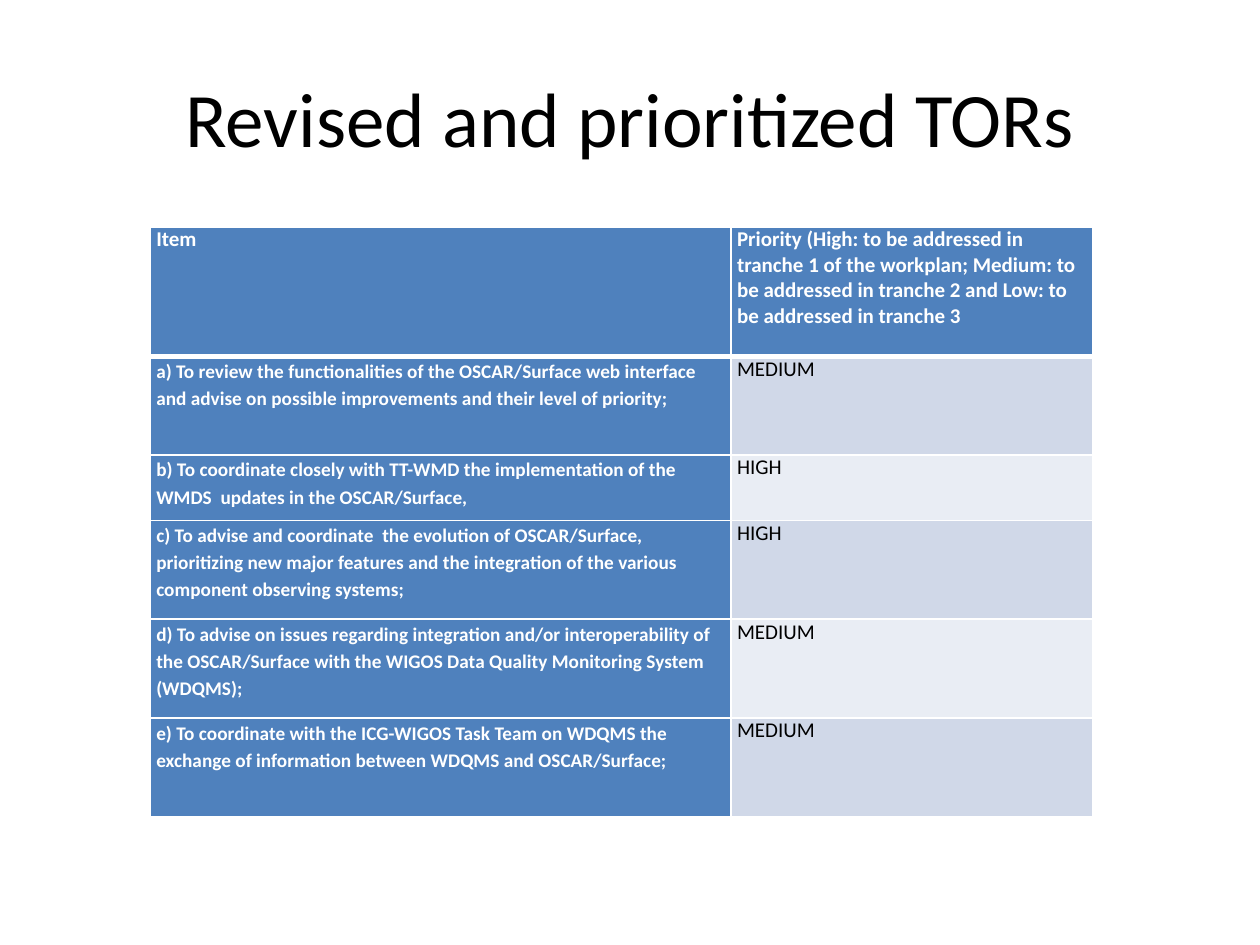
import pptx
import pptx.util
import pptx.dml.color
import pptx.enum.text
import pptx.oxml
import pptx.oxml.ns

TITLE = "Revised and prioritized TORs"
HEAD = (
    "Item",
    "Priority (High: to be addressed in tranche 1 of the workplan; Medium: to "
    "be addressed in tranche 2 and Low: to be addressed in tranche 3",
)
ITEMS = [
    ("a) To review the functionalities of the OSCAR/Surface web interface and "
     "advise on possible improvements and their level of priority;", "MEDIUM"),
    ("b) To coordinate closely with TT-WMD the implementation of the WMDS  "
     "updates in the OSCAR/Surface,", "HIGH"),
    ("c) To advise and coordinate  the evolution of OSCAR/Surface, prioritizing "
     "new major features and the integration of the various component observing "
     "systems;", "HIGH"),
    ("d) To advise on issues regarding integration and/or interoperability of "
     "the OSCAR/Surface with the WIGOS Data Quality Monitoring System (WDQMS);",
     "MEDIUM"),
    ("e) To coordinate with the ICG-WIGOS Task Team on WDQMS the exchange of "
     "information between WDQMS and OSCAR/Surface;", "MEDIUM"),
]
COLS = (4.61, 2.87)
ROWS = (1.03, 0.78, 0.52, 0.785, 0.785, 0.78)
LEFT, TOP = 1.19, 1.8
BLUE, WHITE, BLACK = "4F81BD", "FFFFFF", "000000"
BANDS = ("D0D8E8", "E9EDF4")
inch = pptx.util.Inches


def color(code):
    return pptx.dml.color.RGBColor.from_string(code)


def write(frame, text, size=12, ink=WHITE, bold=False, lines=1.0, align=None):
    para = frame.paragraphs[0]
    para.line_spacing = lines
    para.space_before = pptx.util.Pt(0)
    para.alignment = align
    run = para.add_run()
    run.text = text
    run.font.name = "Calibri"
    run.font.size = pptx.util.Pt(size)
    run.font.bold = bold
    run.font.color.rgb = color(ink)


def border(cell, base):
    """Draw white cell edges; base is the bottom edge's width in points."""
    props = cell._tc.get_or_add_tcPr()
    for spot, (side, width) in enumerate(zip("LRTB", (1, 1, 1, base))):
        props.insert(spot, pptx.oxml.parse_xml(
            f'<a:ln{side} {pptx.oxml.ns.nsdecls("a")} w="{pptx.util.Pt(width)}">'
            f'<a:solidFill><a:srgbClr val="{WHITE}"/></a:solidFill></a:ln{side}>'))


def paint(cell, text, fill, base=1, **style):
    cell.margin_left = cell.margin_right = inch(0.05)
    cell.margin_top = cell.margin_bottom = 0
    cell.fill.solid()
    cell.fill.fore_color.rgb = color(fill)
    border(cell, base)
    write(cell.text_frame, text, **style)


def main():
    deck = pptx.Presentation()
    deck.slide_width, deck.slide_height = inch(10), inch(7.5)
    slide = deck.slides.add_slide(deck.slide_layouts[5])

    title = slide.shapes.title
    title.left, title.top = inch(0.5), inch(0.3)
    title.width, title.height = inch(9), inch(1.25)
    title.text_frame.vertical_anchor = pptx.enum.text.MSO_ANCHOR.MIDDLE
    write(title.text_frame, TITLE, size=44, ink=BLACK,
          align=pptx.enum.text.PP_ALIGN.CENTER)

    table = slide.shapes.add_table(
        len(ROWS), len(COLS), inch(LEFT), inch(TOP),
        inch(sum(COLS)), inch(sum(ROWS))).table
    for col, width in zip(table.columns, COLS):
        col.width = inch(width)
    for row, height in zip(table.rows, ROWS):
        row.height = inch(height)

    for col, text in enumerate(HEAD):
        paint(table.cell(0, col), text, BLUE, base=3, bold=True)
    for row, (item, level) in enumerate(ITEMS, 1):
        paint(table.cell(row, 0), item, BLUE, size=11, bold=True, lines=1.15)
        paint(table.cell(row, 1), level, BANDS[(row - 1) % 2], ink=BLACK)

    deck.save("out.pptx")


if __name__ == "__main__":
    main()
